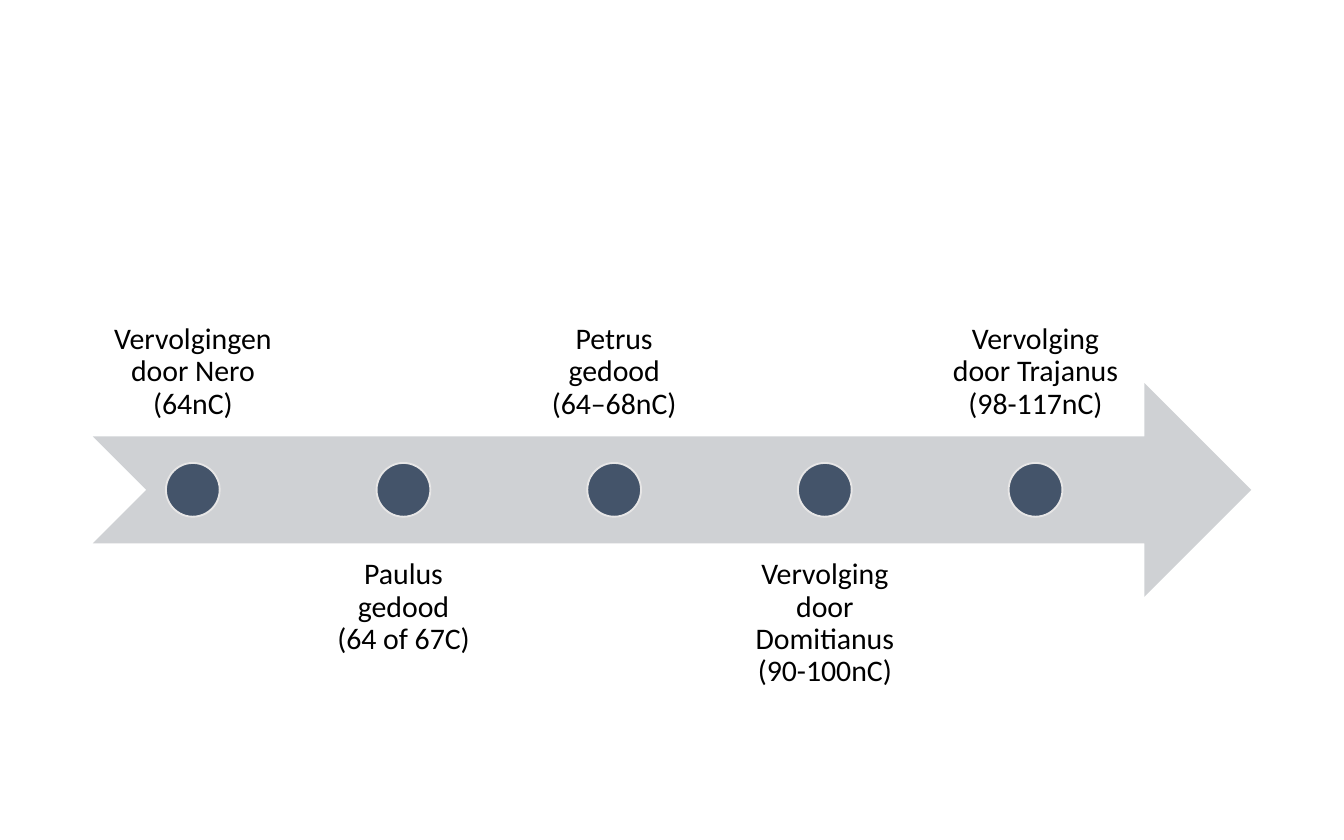
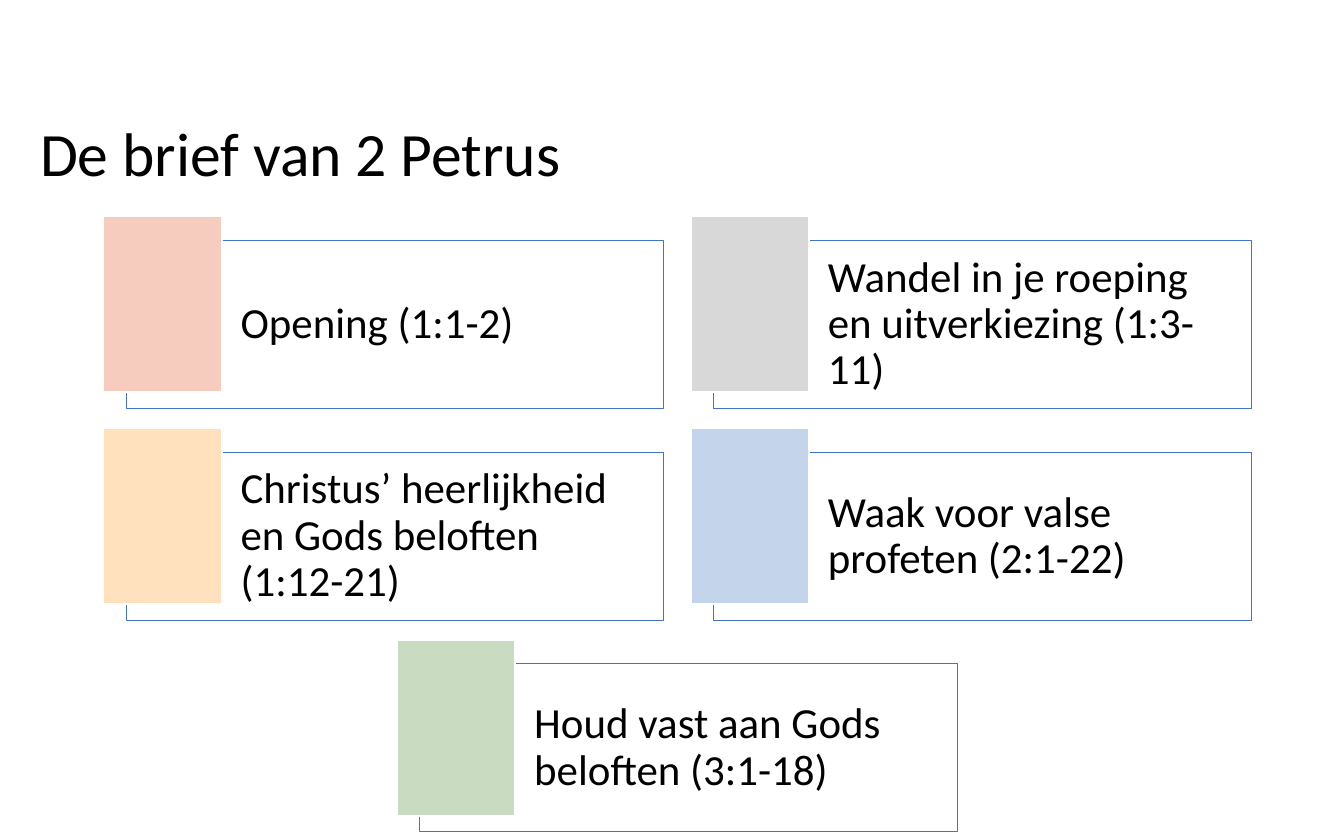
import copy
from dataclasses import dataclass

import pptx
import pptx.dml.color
import pptx.enum.shapes
import pptx.enum.text
import pptx.oxml.ns
import pptx.util
from lxml import etree

Inches = pptx.util.Inches
SHAPE = pptx.enum.shapes.MSO_SHAPE
ALIGN = pptx.enum.text.PP_ALIGN
ANCHOR = pptx.enum.text.MSO_ANCHOR

# Content
EVENTS = [
    "Vervolgingen door Nero (64nC)",
    "Paulus gedood\n(64 of 67C)",
    "Petrus gedood\n(64–68nC)",
    "Vervolging door Domitianus (90-100nC)",
    "Vervolging door Trajanus (98-117nC)",
]
LETTER_TITLE = "De brief van 2 Petrus"
SECTIONS = [
    ("Opening (1:1-2)", "F6CCBE"),
    ("Wandel in je roeping en uitverkiezing (1:3-11)", "D8D8D8"),
    ("Christus’ heerlijkheid en Gods beloften (1:12-21)", "FFE2BD"),
    ("Waak voor valse profeten (2:1-22)", "C4D5EB"),
    ("Houd vast aan Gods beloften (3:1-18)", "C9DBC1"),
]


@dataclass(frozen=True)
class Theme:
    font: str = "Calibri"
    text: str = "000000"
    white: str = "FFFFFF"
    arrow: str = "CFD1D4"
    dot: str = "44546A"
    dot_line: str = "E7E6E6"
    card_line: str = "4472C4"
    card_opacity: int = 40
    title_size: int = 33
    card_size: int = 23
    event_size: int = 16
    line_spacing: float = 0.9


THEME = Theme()


def rgb(value):
    return pptx.dml.color.RGBColor.from_string(value)


def write(shape, text, size, align=ALIGN.LEFT, anchor=ANCHOR.MIDDLE,
          insets=(0.1, 0.05, 0.1, 0.05)):
    frame = shape.text_frame
    frame.word_wrap = True
    frame.vertical_anchor = anchor
    for side, inset in zip(("left", "top", "right", "bottom"), insets):
        setattr(frame, f"margin_{side}", Inches(inset))
    paragraph = frame.paragraphs[0]
    paragraph.text = text
    paragraph.alignment = align
    paragraph.line_spacing = THEME.line_spacing
    font_values = {"name": THEME.font, "size": pptx.util.Pt(size)}
    for run in paragraph.runs:
        for name, value in font_values.items():
            setattr(run.font, name, value)
        run.font.color.rgb = rgb(THEME.text)
    # Line breaks take the same type size as the words around them
    properties = paragraph.runs[0].font._element
    for line_break in shape._element.iter(pptx.oxml.ns.qn("a:br")):
        line_break.append(copy.deepcopy(properties))


def add_text(shapes, box, text, size, **layout):
    write(shapes.add_textbox(*map(Inches, box)), text, size, **layout)


def add_figure(shapes, kind, box, fill, line=None, line_width=1, opacity=100):
    shape = shapes.add_shape(kind, *map(Inches, box))
    shape.shadow.inherit = False
    shape.fill.solid()
    shape.fill.fore_color.rgb = rgb(fill)
    if opacity < 100:
        color = shape._element.spPr.find(".//" + pptx.oxml.ns.qn("a:srgbClr"))
        alpha = etree.SubElement(color, pptx.oxml.ns.qn("a:alpha"))
        alpha.set("val", str(opacity * 1000))
    if line:
        shape.line.color.rgb = rgb(line)
        shape.line.width = pptx.util.Pt(line_width)
    else:
        shape.line.fill.background()
    return shape


def build_timeline(slide):
    left, right_label, label_width, band = 0.69, 6.96, 1.49, 1.59
    arrow_top, label_tops, dot = 2.85, (1.66, 4.04), 0.4
    step = (right_label - left) / (len(EVENTS) - 1)
    shapes = slide.shapes.add_group_shape().shapes

    add_figure(shapes, SHAPE.NOTCHED_RIGHT_ARROW, (left, arrow_top, 8.62, band), THEME.arrow)

    # Labels alternate above and below the arrow
    for index, event in enumerate(EVENTS):
        label_left = left + index * step
        below = index % 2
        add_text(shapes, (label_left, label_tops[below], label_width, band),
                 event, THEME.event_size, align=ALIGN.CENTER,
                 anchor=ANCHOR.TOP if below else ANCHOR.BOTTOM, insets=(0.12,) * 4)
        dot_box = (label_left + (label_width - dot) / 2, arrow_top + (band - dot) / 2, dot, dot)
        add_figure(shapes, SHAPE.OVAL, dot_box, THEME.dot, THEME.dot_line)


def build_sections(slide):
    left, top, width, height = 0.94, 1.79, 4, 1.25
    column_step, row_step = 4.37, 1.575
    add_text(slide.shapes, (0.2, 0.68, 9.3, 0.97), LETTER_TITLE, THEME.title_size)
    shapes = slide.shapes.add_group_shape().shapes

    # Two columns; a single card in the last row is centred
    for index, (text, color) in enumerate(SECTIONS):
        row, column = divmod(index, 2)
        if index == len(SECTIONS) - 1 and column == 0:
            column = 0.5
        x, y = left + column * column_step, top + row * row_step
        card = add_figure(shapes, SHAPE.RECTANGLE, (x, y, width, height), THEME.white,
                          THEME.card_line, 0.5, THEME.card_opacity)
        write(card, text, THEME.card_size, insets=(0.85, 0.1, 0.1, 0.1))
        add_figure(shapes, SHAPE.RECTANGLE, (x - 0.17, y - 0.18, 0.88, 1.31), color, THEME.white)


def main():
    presentation = pptx.Presentation()
    presentation.slide_width = Inches(10)
    presentation.slide_height = Inches(6.25)
    blank = presentation.slide_layouts[6]
    for build in (build_timeline, build_sections):
        slide = presentation.slides.add_slide(blank)
        slide.background.fill.solid()
        slide.background.fill.fore_color.rgb = rgb(THEME.white)
        build(slide)
    presentation.save("out.pptx")


if __name__ == "__main__":
    main()
